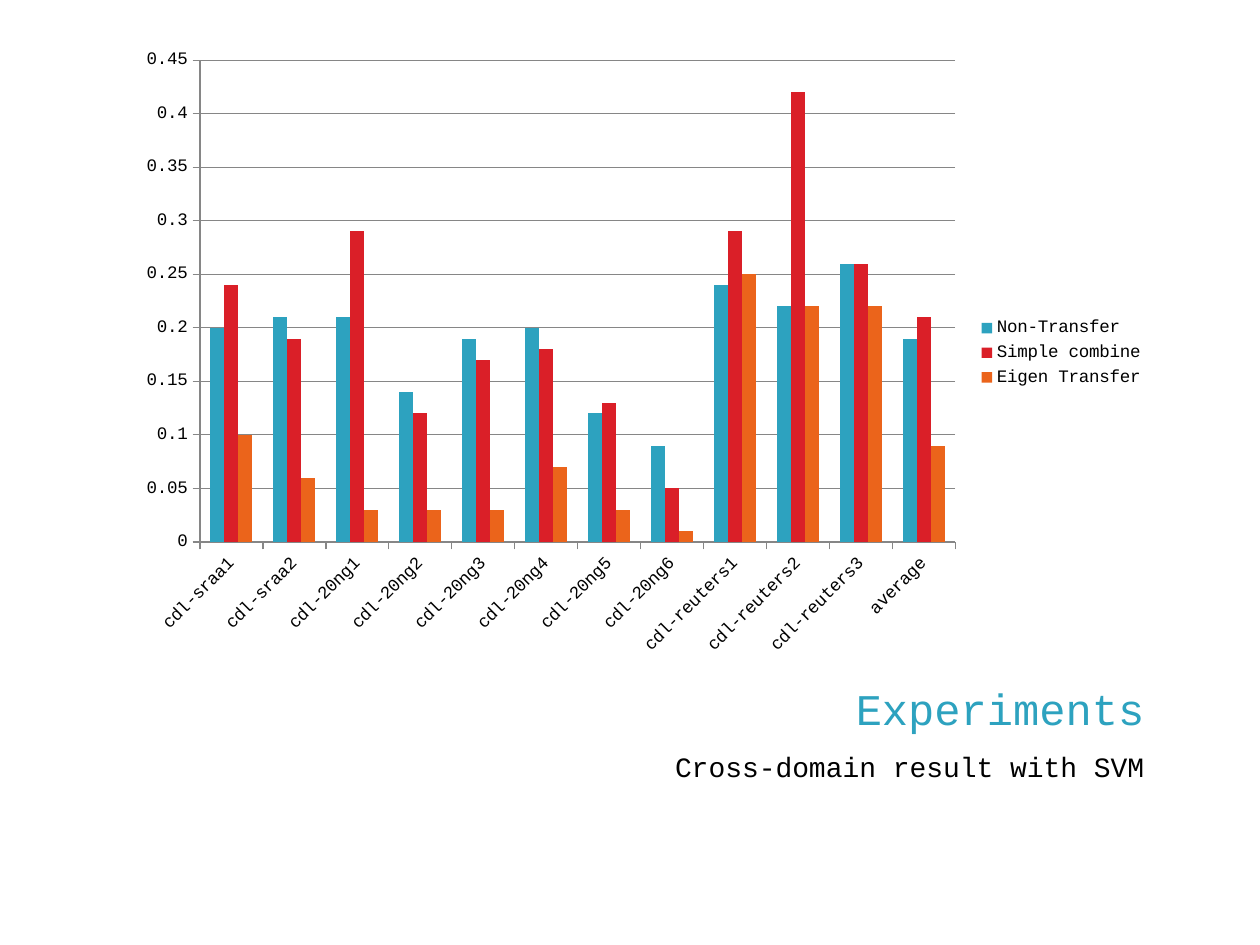
from pptx import Presentation
from pptx.chart.data import CategoryChartData
from pptx.dml.color import RGBColor
from pptx.enum.chart import XL_CHART_TYPE, XL_LEGEND_POSITION, XL_TICK_MARK
from pptx.enum.text import MSO_ANCHOR, PP_ALIGN
from pptx.util import Inches, Pt

COLUMNS = XL_CHART_TYPE.COLUMN_CLUSTERED
LEGEND_RIGHT = XL_LEGEND_POSITION.RIGHT
TICK_OUTSIDE = XL_TICK_MARK.OUTSIDE
TOP, BOTTOM = MSO_ANCHOR.TOP, MSO_ANCHOR.BOTTOM
RIGHT = PP_ALIGN.RIGHT

FONT = "Courier New"
TEAL = RGBColor(0x2D, 0xA2, 0xBF)
RED = RGBColor(0xDA, 0x1F, 0x28)
ORANGE = RGBColor(0xEB, 0x64, 0x1B)
BLACK = RGBColor(0, 0, 0)
GRAY = RGBColor(0x86, 0x86, 0x86)

TITLE = "Experiments"
SUBTITLE = "Cross-domain result with SVM"
DATASETS = (
    [f"cdl-sraa{n}" for n in (1, 2)]
    + [f"cdl-20ng{n}" for n in range(1, 7)]
    + [f"cdl-reuters{n}" for n in (1, 2, 3)]
    + ["average"]
)
METHODS = [
    ("Non-Transfer", TEAL,
     (0.2, 0.21, 0.21, 0.14, 0.19, 0.2, 0.12, 0.09, 0.24, 0.22, 0.26, 0.19)),
    ("Simple combine", RED,
     (0.24, 0.19, 0.29, 0.12, 0.17, 0.18, 0.13, 0.05, 0.29, 0.42, 0.26, 0.21)),
    ("Eigen Transfer", ORANGE,
     (0.1, 0.06, 0.03, 0.03, 0.03, 0.07, 0.03, 0.01, 0.25, 0.22, 0.22, 0.09)),
]

LEFT, WIDTH = 1, 8.18
SUBTITLE_WIDTH = 4.35
CHART_TOP, CHART_HEIGHT = 0.3, 5
TITLE_TOP, TITLE_HEIGHT = 5.33, 0.5
SUBTITLE_TOP, SUBTITLE_HEIGHT = 5.86, 1


def style_font(font, size, color):
    font.name = FONT
    font.size = Pt(size)
    font.bold = False
    font.color.rgb = color


def set_heading(shape, text, size, color, anchor, top_margin):
    frame = shape.text_frame
    frame.word_wrap = True
    frame.vertical_anchor = anchor
    frame.margin_left = frame.margin_right = Inches(0.1)
    frame.margin_top, frame.margin_bottom = Inches(top_margin), 0
    frame.text = text
    paragraph = frame.paragraphs[0]
    paragraph.alignment = RIGHT
    style_font(paragraph.runs[0].font, size, color)


def add_error_chart(slide):
    data = CategoryChartData()
    data.categories = DATASETS
    for name, _, errors in METHODS:
        data.add_series(name, errors)
    chart = slide.shapes.add_chart(
        COLUMNS, Inches(LEFT), Inches(CHART_TOP),
        Inches(WIDTH), Inches(CHART_HEIGHT), data).chart
    chart.has_title = False
    style_font(chart.font, 10, BLACK)
    chart.has_legend = True
    chart.legend.position = LEGEND_RIGHT
    chart.legend.include_in_layout = False

    plot = chart.plots[0]
    plot.gap_width, plot.overlap = 150, 0
    plot.vary_by_categories = False
    for series, (_, color, _) in zip(plot.series, METHODS):
        series.format.fill.solid()
        series.format.fill.fore_color.rgb = color

    values = chart.value_axis
    values.minimum_scale, values.maximum_scale, values.major_unit = 0, 0.45, 0.05
    values.has_major_gridlines = True
    for axis in (chart.category_axis, values):
        axis.major_tick_mark = TICK_OUTSIDE
        style_font(axis.tick_labels.font, 10, BLACK)
    for part in (chart.category_axis, values, values.major_gridlines):
        part.format.line.color.rgb = GRAY
        part.format.line.width = Pt(0.75)
    label_body = chart.category_axis.tick_labels.font._element.getparent().getparent().getparent()
    label_body.bodyPr.set("rot", str(-45 * 60000))


def main():
    deck = Presentation()
    deck.slide_width, deck.slide_height = Inches(10), Inches(7.5)
    slide = deck.slides.add_slide(deck.slide_layouts[5])

    title = slide.shapes.title
    title.left, title.top = Inches(LEFT), Inches(TITLE_TOP)
    title.width, title.height = Inches(WIDTH), Inches(TITLE_HEIGHT)
    set_heading(title, TITLE, 25, TEAL, BOTTOM, 0)

    subtitle = slide.shapes.add_textbox(
        Inches(LEFT + WIDTH - SUBTITLE_WIDTH), Inches(SUBTITLE_TOP),
        Inches(SUBTITLE_WIDTH), Inches(SUBTITLE_HEIGHT))
    set_heading(subtitle, SUBTITLE, 16, BLACK, TOP, 0.09)

    add_error_chart(slide)
    deck.save("out.pptx")


if __name__ == "__main__":
    main()
